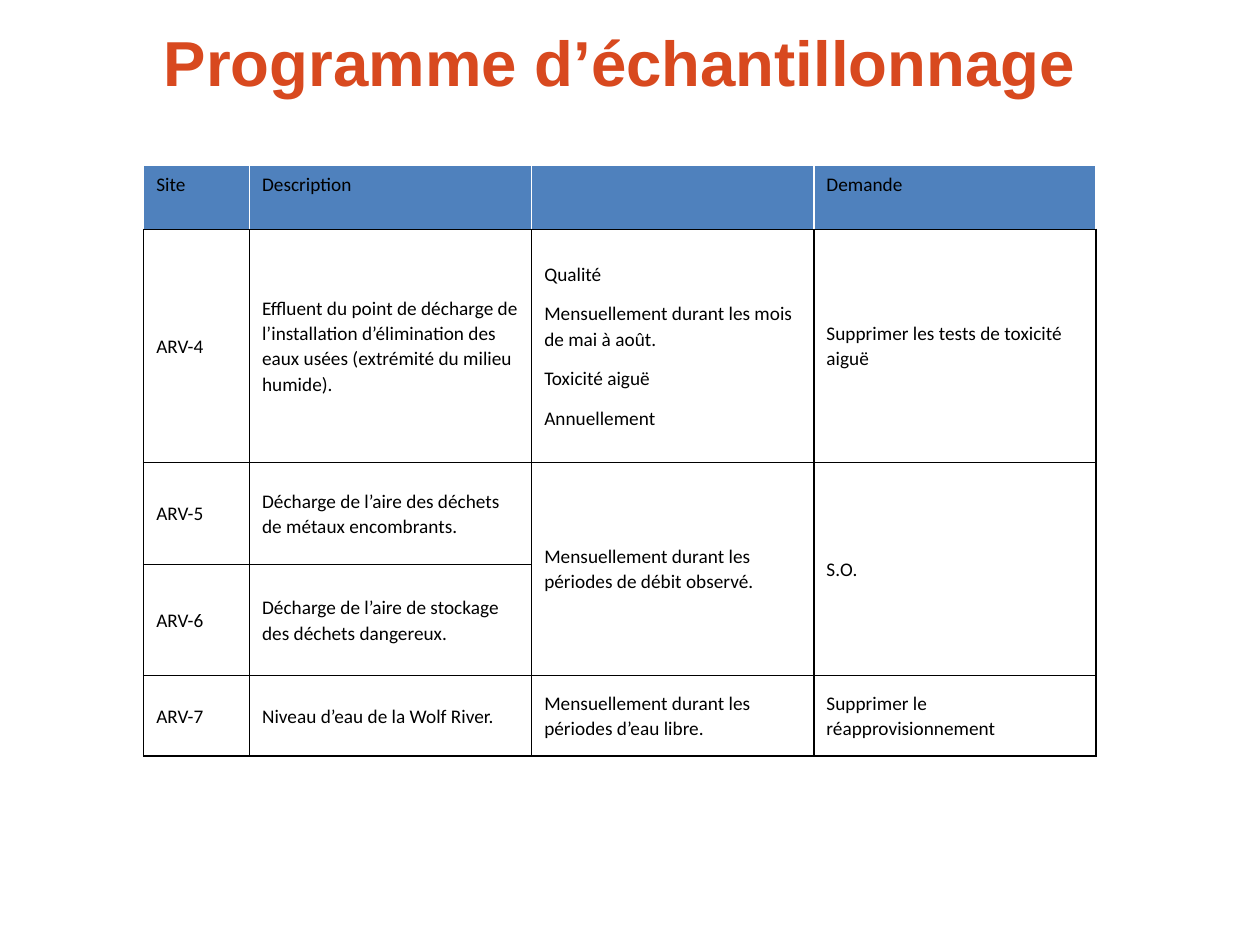
from lxml.etree import SubElement
from pptx import Presentation
from pptx.dml.color import RGBColor
from pptx.enum.text import MSO_ANCHOR as Anchor, PP_ALIGN as Align
from pptx.oxml.ns import qn
from pptx.util import Inches, Pt

BLACK, WHITE, BLUE, ORANGE = "000000", "FFFFFF", "4F81BD", "D8491F"
LEFT, WIDTH = 1.14, 7.56
COLUMN_WIDTHS = [0.84, 2.24, 2.24, 2.24]
ROW_HEIGHTS = [0.51, 1.85, 0.81, 0.88, 0.64]
MERGES = [((2, 2), (3, 2)), ((2, 3), (3, 3))]
# A line break within an entry starts a new paragraph; None is covered by a merge.
ROWS = [
    ["Site", "Description", "", "Demande"],
    ["ARV-4",
     "Effluent du point de décharge de l’installation d’élimination des eaux usées "
     "(extrémité du milieu humide).",
     "Qualité\nMensuellement durant les mois de mai à août.\nToxicité aiguë\nAnnuellement",
     "Supprimer les tests de toxicité aiguë"],
    ["ARV-5", "Décharge de l’aire des déchets de métaux encombrants.",
     "Mensuellement durant les périodes de débit observé.", "S.O."],
    ["ARV-6", "Décharge de l’aire de stockage des déchets dangereux.", None, None],
    ["ARV-7", "Niveau d’eau de la Wolf River.",
     "Mensuellement durant les périodes d’eau libre.", "Supprimer le réapprovisionnement"],
]


def color(value):
    return RGBColor.from_string(value)


def write_text(frame, text, *, font, size, fill=BLACK, bold=False,
               align=Align.LEFT, line_spacing=None, space_after=None):
    for index, line in enumerate(text.split("\n")):
        para = frame.add_paragraph() if index else frame.paragraphs[0]
        para.alignment = align
        para.line_spacing = line_spacing
        para.space_after = space_after
        para.font.size = Pt(size)
        if line:
            span = para.add_run()
            span.text = line
            span.font.name = font
            span.font.size = Pt(size)
            span.font.bold = bold
            span.font.color.rgb = color(fill)


def set_borders(cell, **sides):
    """Draw 1 pt borders; sides map L, R, T, B (in that order) to colours."""
    properties = cell._tc.get_or_add_tcPr()
    for side, value in sides.items():
        line = SubElement(properties, qn(f"a:ln{side}"), w=str(Pt(1)))
        SubElement(SubElement(line, qn("a:solidFill")), qn("a:srgbClr"), val=value)


def add_title(page, text):
    box = page.shapes.add_textbox(Inches(LEFT), Inches(0.01), Inches(WIDTH), Inches(0.95))
    frame = box.text_frame
    frame.word_wrap = True
    frame.vertical_anchor = Anchor.MIDDLE
    write_text(frame, text, font="Arial", size=36.3, fill=ORANGE, bold=True,
               align=Align.CENTER)


def format_cell(cell, is_header):
    edge = WHITE if is_header else BLACK
    set_borders(cell, L=edge, R=edge, T=edge if is_header else BLACK, B=BLACK)
    if is_header:
        cell.fill.solid()
        cell.fill.fore_color.rgb = color(BLUE)
    else:
        cell.fill.background()
    cell.vertical_anchor = Anchor.TOP if is_header else Anchor.MIDDLE


def add_sampling_table(page):
    table = page.shapes.add_table(
        len(ROWS), len(COLUMN_WIDTHS), Inches(LEFT), Inches(1.31),
        Inches(WIDTH), Inches(sum(ROW_HEIGHTS))).table
    table.horz_banding = False
    for column, width in zip(table.columns, COLUMN_WIDTHS):
        column.width = Inches(width)
    for row, height in zip(table.rows, ROW_HEIGHTS):
        row.height = Inches(height)
    for start, end in MERGES:
        table.cell(*start).merge(table.cell(*end))
    for row_index, texts in enumerate(ROWS):
        for column_index, text in enumerate(texts):
            cell = table.cell(row_index, column_index)
            format_cell(cell, is_header=row_index == 0)
            if text is not None:
                write_text(cell.text_frame, text, font="Calibri", size=11,
                           line_spacing=1.07, space_after=Pt(8))


def main():
    deck = Presentation()
    deck.slide_width, deck.slide_height = Inches(10), Inches(7.5)
    page = deck.slides.add_slide(deck.slide_layouts[6])
    add_title(page, "Programme d’échantillonnage")
    add_sampling_table(page)
    deck.save("out.pptx")


if __name__ == "__main__":
    main()
